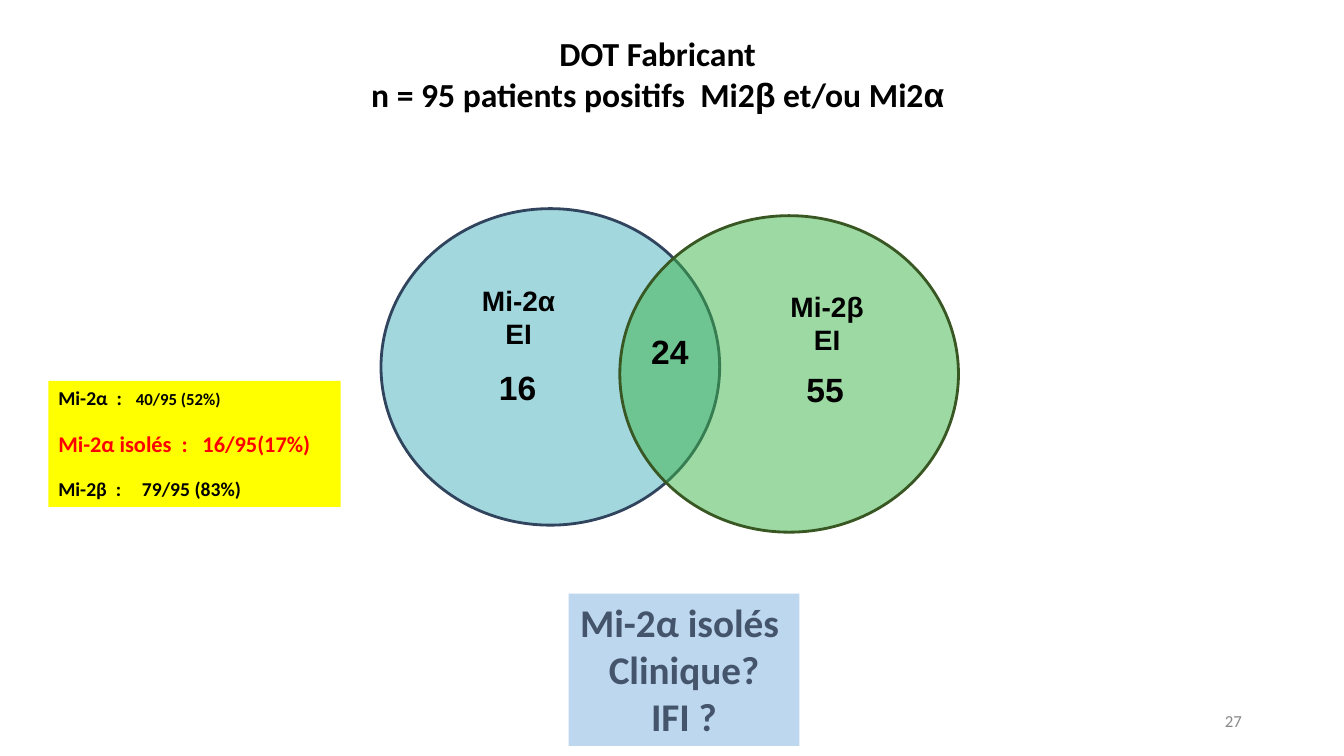
from pptx import Presentation
from pptx import util as u
from pptx.dml import color
from pptx.enum import shapes, text
from pptx.oxml import ns
from lxml import etree

# Content: a paragraph is a list of (words, format changes)
COLOURS = {"black": "000000", "red": "FF0000", "grey": "888888", "slate": "44546A",
           "sky": "BDD7EE", "yellow": "FFFF00", "teal": "43AEBD", "navy": "30455D",
           "green": "3CB548", "forest": "385723"}
GREEK = {"name": "Arial"}
TITLE = [[("DOT Fabricant", {})],
         [("n = 95 patients positifs  Mi2", {}), ("β", GREEK),
          (" et/ou Mi2", {}), ("α", GREEK)]]
RATES = [[("Mi-2α  :", {"size": 14}), ("\t40/95 (52%)", {"size": 12})],
         [("Mi-2α isolés  :\t16/95(17%)", {"size": 16, "color": "red"})],
         [("Mi-2β  :\t79/95 (83%)", {"size": 14})]]
RATE_TABS = [0.77, 1.43, 0.83]  # inches from the text edge
QUESTIONS = ["Mi-2α isolés ", "Clinique?", "IFI ?"]

# Places: left, top, width, height in percent of the slide
WIDTH, HEIGHT = 13.33, 7.5
TITLE_AT = (7.95, 3.73, 81.97, 12.13)
RATES_AT = (3.6, 50.4, 21.75, 16.67)
QUESTIONS_AT = (42.3, 78.53, 17.18, 20.13)
NUMBER_AT = (70.65, 92.67, 22.5, 5.33)
OVAL_SIZE = (25.2, 41.87)
LABEL_WIDTH = 15.38
OVALS = [((28.35, 27.6), "teal", "navy", 49), ((46.12, 28.53), "green", "forest", 50)]
LABELS = [(["Mi-2α", "EI"], (30.9, 36.8), 20), (["Mi-2β", "EI"], (53.85, 37.6), 20),
          (["24"], (42.15, 43.07), 24), (["55"], (53.7, 48.13), 24),
          (["16"], (30.82, 47.87), 24)]
LABEL_HEIGHTS = {20: 10.27, 24: 6.67}


def rgb(name):
    return color.RGBColor.from_string(COLOURS[name])


def place(at):
    return [u.Inches(share * side / 100)
            for share, side in zip(at, (WIDTH, HEIGHT, WIDTH, HEIGHT))]


def plain(lines):
    return [[(line, {})] for line in lines]


def write(box, paras, align="CENTER", anchor="TOP", wrap=True, **base):
    frame = box.text_frame
    for key, value in {"word_wrap": wrap, "auto_size": text.MSO_AUTO_SIZE.NONE,
                       "vertical_anchor": text.MSO_ANCHOR[anchor],
                       "margin_left": u.Inches(0.1), "margin_right": u.Inches(0.1),
                       "margin_top": u.Inches(0.05),
                       "margin_bottom": u.Inches(0.05)}.items():
        setattr(frame, key, value)
    for index, spans in enumerate(paras):
        para = frame.add_paragraph() if index else frame.paragraphs[0]
        para.alignment = text.PP_ALIGN[align]
        for words, changes in spans:
            span = para.add_run()
            span.text = words
            look = {"name": "Calibri", "bold": True, "color": "black", **base, **changes}
            span.font.color.rgb = rgb(look.pop("color"))
            look["size"] = u.Pt(look["size"])
            for key, value in look.items():
                setattr(span.font, key, value)
    return frame


def add_filled(kind, at, fill, line=None):
    shape = page.shapes.add_shape(kind, *place(at))
    shape.shadow.inherit = False
    shape.fill.solid()
    shape.fill.fore_color.rgb = rgb(fill)
    if line:
        shape.line.color.rgb = rgb(line)
        shape.line.width = u.Pt(2)
    else:
        shape.line.fill.background()
    return shape


deck = Presentation()
deck.slide_width, deck.slide_height = u.Inches(WIDTH), u.Inches(HEIGHT)
page = deck.slides.add_slide(deck.slide_layouts[5])

# Title
title = page.shapes.title
title.left, title.top, title.width, title.height = place(TITLE_AT)
write(title, TITLE, size=24)

# Overlapping ovals
for corner, fill, line, opacity in OVALS:
    oval = add_filled(shapes.MSO_SHAPE.OVAL, corner + OVAL_SIZE, fill, line)
    tint = oval.fill._xPr.find(".//" + ns.qn("a:srgbClr"))
    etree.SubElement(tint, ns.qn("a:alpha"), val=str(opacity * 1000))

# Set names and counts
for lines, corner, size in LABELS:
    label = page.shapes.add_textbox(*place(corner + (LABEL_WIDTH, LABEL_HEIGHTS[size])))
    write(label, plain(lines), size=size, name="Arial")

# Questions and rates
questions = add_filled(shapes.MSO_SHAPE.RECTANGLE, QUESTIONS_AT, "sky")
write(questions, plain(QUESTIONS), wrap=False, size=28, color="slate")

rates = add_filled(shapes.MSO_SHAPE.RECTANGLE, RATES_AT, "yellow")
frame = write(rates, RATES, align="LEFT")
for index, (para, stop) in enumerate(zip(frame.paragraphs, RATE_TABS)):
    para.space_before = u.Pt(14.6 if index else 0)
    tabs = etree.SubElement(para._p.get_or_add_pPr(), ns.qn("a:tabLst"))
    etree.SubElement(tabs, ns.qn("a:tab"), pos=str(u.Inches(stop)), algn="l")

# Page number
number = page.shapes.add_textbox(*place(NUMBER_AT))
write(number, plain(["27"]), align="RIGHT", anchor="MIDDLE",
      size=12, bold=False, color="grey")

deck.save("out.pptx")
